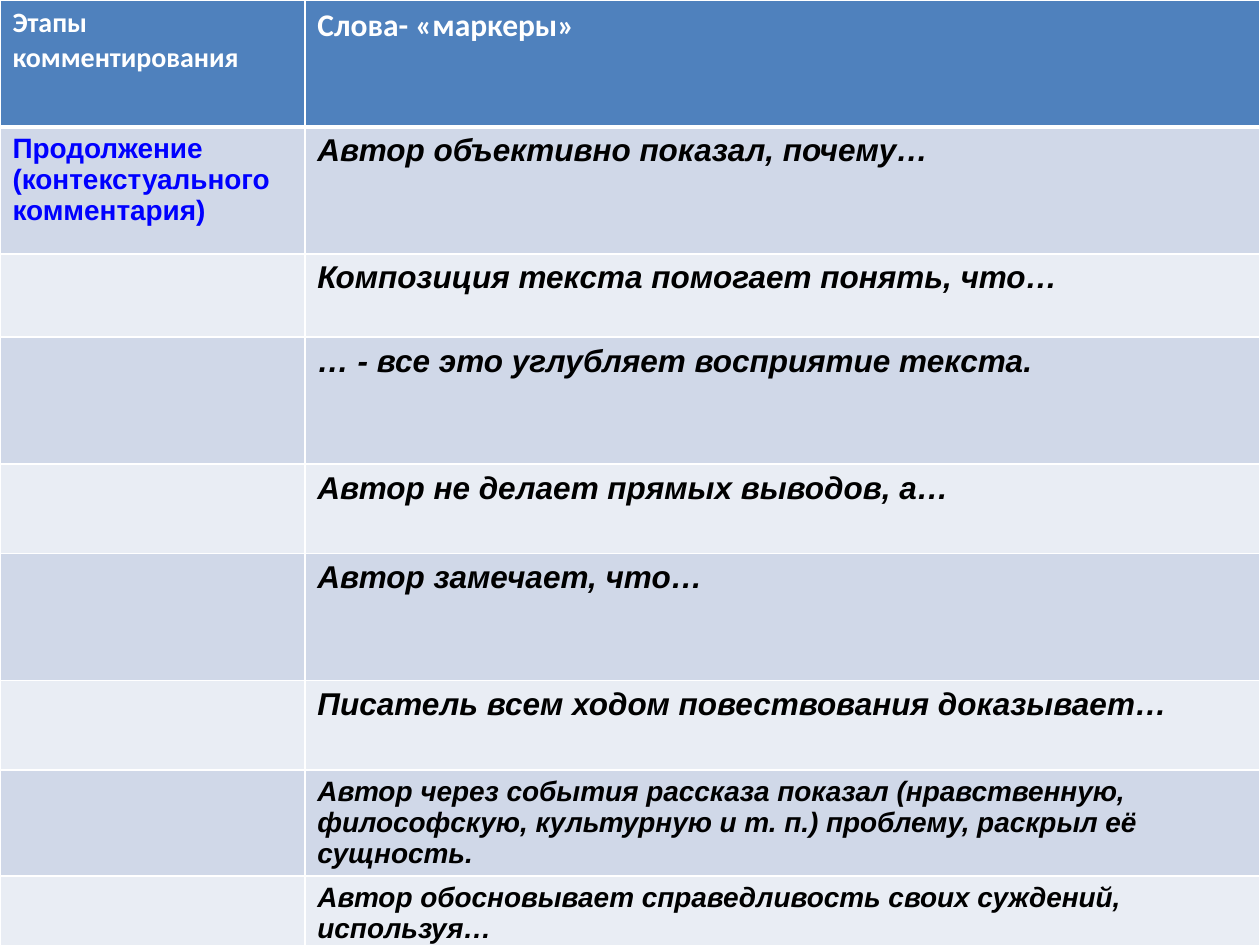
from typing import NamedTuple

from lxml import etree
from pptx import Presentation
from pptx import util as u
from pptx.dml.color import RGBColor
from pptx.oxml.ns import qn


class Style(NamedTuple):
    name: str
    size: float
    color: str
    italic: bool = False


class Row(NamedTuple):
    height: float
    marker: str
    marker_style: Style
    stage: str = ""
    stage_style: Style | None = None


HEAD_STAGE = Style("Calibri", 16, "FFFFFF")
HEAD_MARKER = Style("Calibri", 18, "FFFFFF")
STAGE = Style("Arial", 16, "0000FF")
MARKER = Style("Arial", 18, "000000", True)
SMALL_MARKER = MARKER._replace(size=16)

HEADER_FILL = "4F81BD"
BANDS = ("E9EDF4", "D0D8E8")
TALL, MEDIUM = 72.6, 51.1
COLUMNS = (174.2, 545.8)
ROWS = [
    Row(TALL, "Слова- «маркеры»", HEAD_MARKER, "Этапы комментирования", HEAD_STAGE),
    Row(TALL, "Автор объективно показал, почему…", MARKER,
        "Продолжение (контекстуального комментария)", STAGE),
    Row(47.5, "Композиция текста помогает понять, что…", MARKER),
    Row(TALL, "… - все это углубляет восприятие текста.", MARKER),
    Row(MEDIUM, "Автор не делает прямых выводов, а…", MARKER),
    Row(TALL, "Автор замечает, что…", MARKER),
    Row(MEDIUM, "Писатель всем ходом повествования доказывает…", MARKER),
    Row(MEDIUM, "Автор через события рассказа показал (нравственную, философскую, "
        "культурную и т. п.) проблему, раскрыл её сущность.", SMALL_MARKER),
    Row(MEDIUM, "Автор обосновывает справедливость своих суждений, используя…",
        SMALL_MARKER),
]


def paint(fmt, color: str) -> None:
    if hasattr(fmt, "solid"):
        fmt.solid()
        fmt = fmt.fore_color
    fmt.rgb = RGBColor.from_string(color)


def write(cell, content: str, style: Style) -> None:
    r = cell.text_frame.paragraphs[0].add_run()
    r.text = content
    formats = {"name": style.name, "size": u.Pt(style.size),
               "bold": True, "italic": style.italic}
    for key, value in formats.items():
        setattr(r.font, key, value)
    paint(r.font.color, style.color)


def set_borders(cell, widths: dict[str, float]) -> None:
    props = cell._tc.get_or_add_tcPr()
    for i, (side, width) in enumerate(widths.items()):
        ln = etree.Element(qn(f"a:ln{side}"), w=str(u.Pt(width)))
        fill = etree.SubElement(ln, qn("a:solidFill"))
        etree.SubElement(fill, qn("a:srgbClr"), val="FFFFFF")
        props.insert(i, ln)


def draw_table(s, rows: list[Row]) -> None:
    height = sum(row.height for row in rows)
    table = s.shapes.add_table(len(rows), len(COLUMNS), 0, 0,
                               u.Pt(sum(COLUMNS)), u.Pt(height)).table
    for column, width in zip(table.columns, COLUMNS):
        column.width = u.Pt(width)
    for i, row in enumerate(rows):
        table.rows[i].height = u.Pt(row.height)
        entries = ((row.stage, row.stage_style), (row.marker, row.marker_style))
        for j, (content, style) in enumerate(entries):
            cell = table.cell(i, j)
            paint(cell.fill, BANDS[i % 2] if i else HEADER_FILL)
            set_borders(cell, {"L": 1, "R": 1, "T": 3 if i == 1 else 1,
                               "B": 3 if i == 0 else 1})
            if content:
                write(cell, content, style)


def main() -> None:
    prs = Presentation()
    prs.slide_width, prs.slide_height = u.Pt(720), u.Pt(540)
    s = prs.slides.add_slide(prs.slide_layouts[6])
    draw_table(s, ROWS)
    prs.save("out.pptx")


if __name__ == "__main__":
    main()
